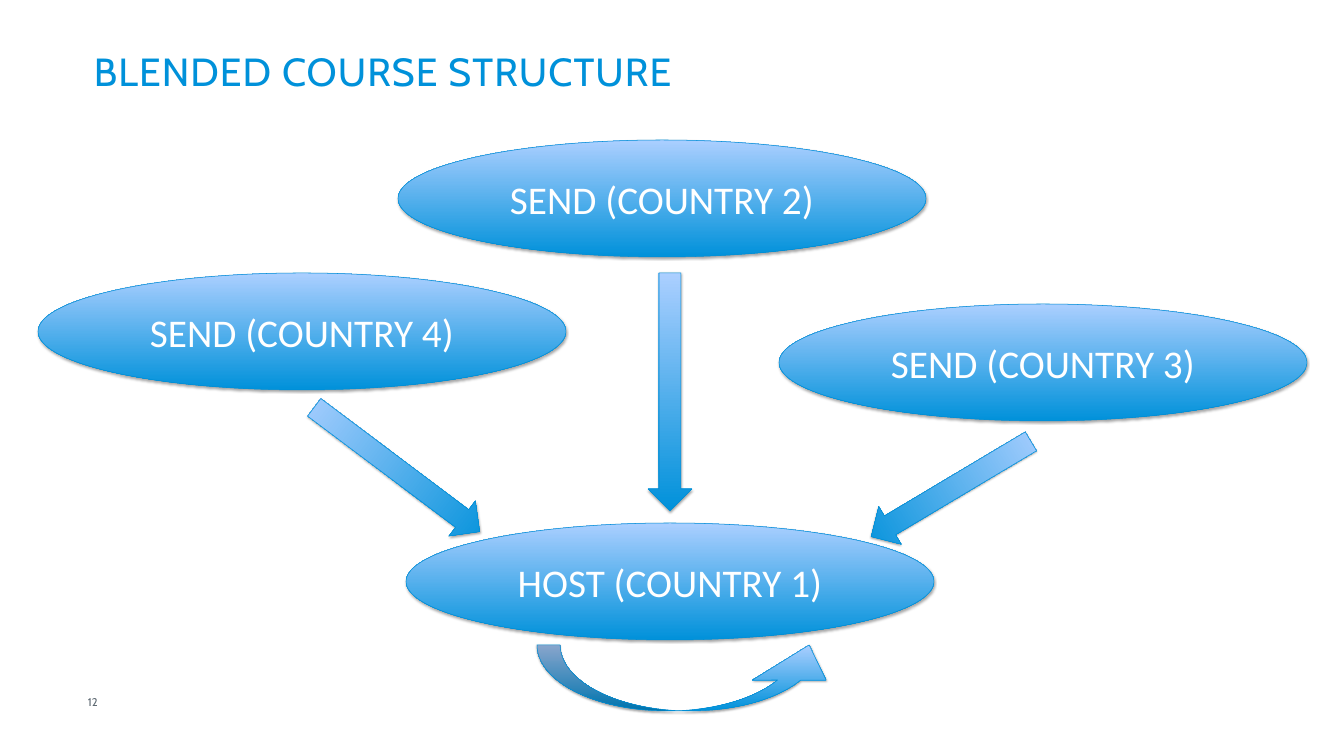
import pptx
import pptx.util
import pptx.dml.color
import pptx.enum.shapes
import pptx.enum.text
import pptx.oxml
import pptx.oxml.ns

PX = 914400 / 50.4
SLIDE = (1344, 756)
COLORS = {"blue": "0091DA", "light": "ABCFFF", "edge": "008ED5",
          "gray": "5B6770", "white": "FFFFFF", "shadow": "000000"}

TITLE = ("BLENDED COURSE STRUCTURE", (89, 45, 1162, 47))
PAGE = ("12", (83, 685, 40, 35))
OVAL_SIZE = (528, 117)
OVALS = [
    ("HOST (COUNTRY 1)", 406, 523),
    ("SEND (COUNTRY 3)", 779, 304),
    ("SEND (COUNTRY 4)", 38, 273),
    ("SEND (COUNTRY 2)", 398, 140),
]
ARROW_WIDTH = 44
ARROWS = [
    (929, 396, 186, 59.2),
    (375, 366, 207, 306.9),
    (648, 273, 238, 0),
]
RETURN_ARROW = (537, 645, 309, 66)
RETURN_ADJUSTMENTS = (0.351, 1.118, 0.531)

SHAPE = pptx.enum.shapes.MSO_SHAPE
ANCHOR = pptx.enum.text.MSO_ANCHOR
ALIGN = pptx.enum.text.PP_ALIGN


def emu(*lengths):
    return [round(n * PX) for n in lengths]


def rgb(name):
    return pptx.dml.color.RGBColor.from_string(COLORS[name])


def write(sp, text, size, font, color, anchor, align=ALIGN.LEFT):
    tf = sp.text_frame
    tf.word_wrap = True
    tf.vertical_anchor = anchor
    p = tf.paragraphs[0]
    p.alignment = align
    r = p.add_run()
    r.text = text
    p.font.size = pptx.util.Pt(size)
    p.font.name = font
    p.font.color.rgb = rgb(color)
    return r


def add_text(s, text, box, size, color, anchor):
    sp = s.shapes.add_textbox(*emu(*box))
    return write(sp, text, size, "Cabin", color, anchor)


def add_glossy(s, kind, box):
    sp = s.shapes.add_shape(kind, *emu(*box))
    sp.fill.gradient()
    sp.fill.gradient_angle = 90
    for stop, name in zip(sp.fill.gradient_stops, ("blue", "light")):
        stop.color.rgb = rgb(name)
    sp.line.color.rgb = rgb("edge")
    sp.line.width = pptx.util.Pt(0.75)
    sp.shadow.inherit = False
    effects = sp._element.spPr.find(pptx.oxml.ns.qn("a:effectLst"))
    effects.append(pptx.oxml.parse_xml(
        f'<a:outerShdw {pptx.oxml.ns.nsdecls("a")} blurRad="40000" dist="23000" '
        f'dir="5400000" rotWithShape="0"><a:srgbClr val="{COLORS["shadow"]}">'
        '<a:alpha val="35000"/></a:srgbClr></a:outerShdw>'))
    return sp


def main():
    prs = pptx.Presentation()
    prs.slide_width, prs.slide_height = emu(*SLIDE)
    s = prs.slides.add_slide(prs.slide_layouts[6])

    add_text(s, *PAGE, 16, "gray", ANCHOR.MIDDLE)
    r = add_text(s, *TITLE, 56, "blue", ANCHOR.TOP)
    r._r.get_or_add_rPr().set("spc", "150")

    for text, x, y in OVALS:
        sp = add_glossy(s, SHAPE.OVAL, (x, y, *OVAL_SIZE))
        write(sp, text, 56, "Calibri", "white", ANCHOR.MIDDLE, ALIGN.CENTER)

    for x, y, length, angle in ARROWS:
        sp = add_glossy(s, SHAPE.DOWN_ARROW, (x, y, ARROW_WIDTH, length))
        sp.rotation = angle

    sp = add_glossy(s, SHAPE.CURVED_UP_ARROW, RETURN_ARROW)
    for i, value in enumerate(RETURN_ADJUSTMENTS):
        sp.adjustments[i] = value

    prs.save("out.pptx")


if __name__ == "__main__":
    main()
